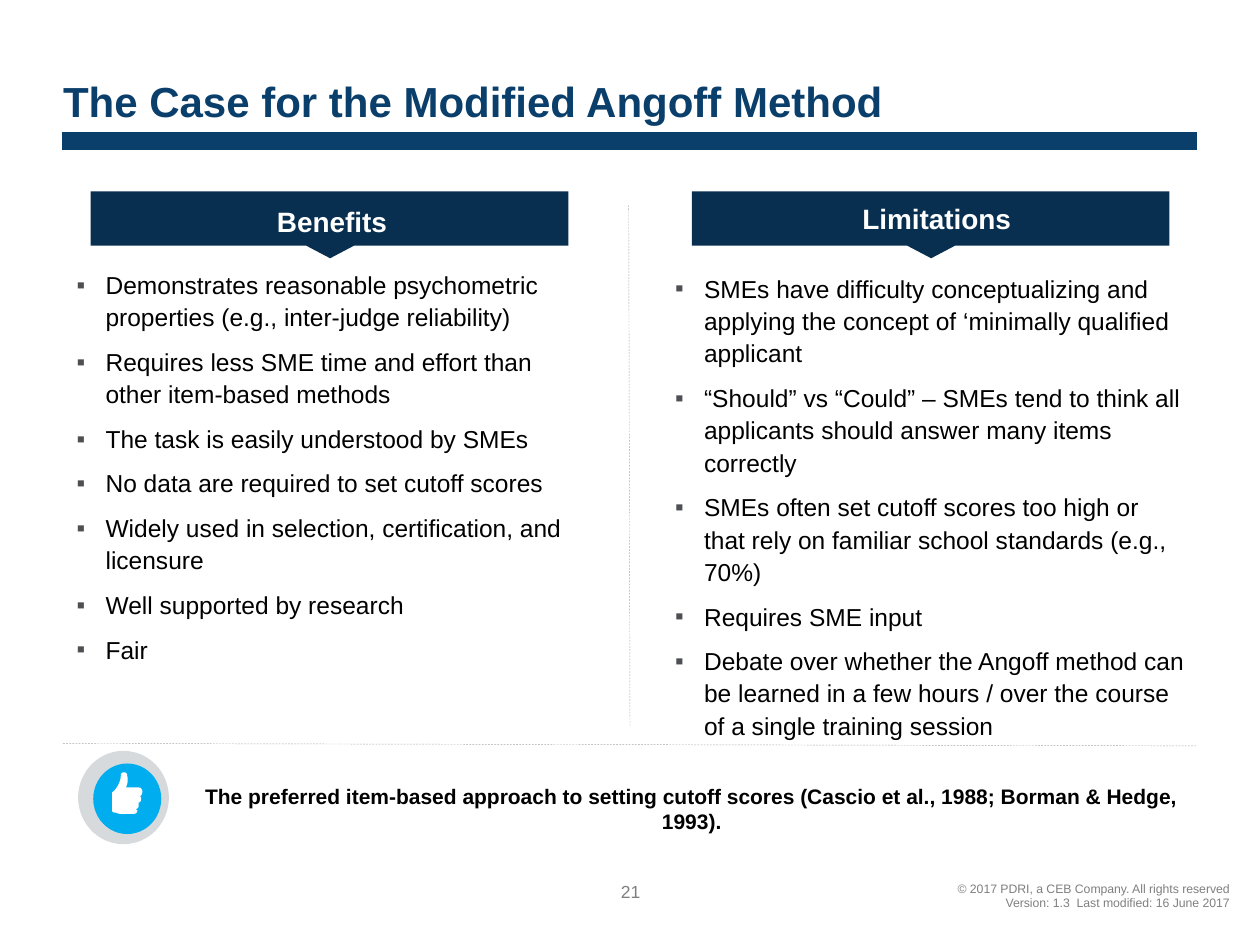
import lxml.etree
import pptx
import pptx.dml.color
import pptx.enum.dml
import pptx.enum.shapes
import pptx.enum.text
import pptx.oxml.ns
import pptx.util

Inches = pptx.util.Inches
Pt = pptx.util.Pt
ALIGN = pptx.enum.text.PP_ALIGN
ANCHOR = pptx.enum.text.MSO_ANCHOR
qn = pptx.oxml.ns.qn

THEME = {
    "font": "Arial",
    "title": "0A3F6B", "header": "082F50", "header_text": "FEFFFE",
    "body": "000000", "bullet": "4D4F53", "divider": "A6A6A6",
    "ring": "D6DADC", "disc": "00AEEF", "thumb": "FFFFFF",
    "footer": "7F7F7F", "version": "808080",
    "title_size": 24, "header_size": 16, "body_size": 14,
    "conclusion_size": 12, "number_size": 10, "footer_size": 7,
}

TITLE = "The Case for the Modified Angoff Method"
COLUMNS = [
    {"heading": "Benefits", "banner_left": 0.72, "heading_at": (0.2, 1.62), "list_at": (0.51, 2.07),
     "points": [
         "Demonstrates reasonable psychometric properties (e.g., inter-judge reliability)",
         "Requires less SME time and effort than other item-based methods",
         "The task is easily understood by SMEs",
         "No data are required to set cutoff scores",
         "Widely used in selection, certification, and licensure",
         "Well supported by research",
         "Fair",
     ]},
    {"heading": "Limitations", "banner_left": 5.49, "heading_at": (5, 1.6), "list_at": (5.26, 2.1),
     "points": [
         "SMEs have difficulty conceptualizing and applying the concept of ‘minimally qualified applicant",
         "“Should” vs “Could” – SMEs tend to think all applicants should answer many items correctly",
         "SMEs often set cutoff scores too high or that rely on familiar school standards (e.g., 70%)",
         "Requires SME input",
         "Debate over whether the Angoff method can be learned in a few hours / "
         "over the course of a single training session",
     ]},
]
CONCLUSION = ("The preferred item-based approach to setting cutoff scores "
              "(Cascio et al., 1988; Borman & Hedge, 1993).")
PAGE_NUMBER = "21"
COPYRIGHT = "© 2017 PDRI, a CEB Company. All rights reserved"
VERSION = "Version: 1.3\u00a0 Last modified: 16 June 2017"

BANNER_TOP = 1.52
BANNER = [(0, 0), (3.79, 0), (3.79, 0.43), (2.09, 0.43), (1.9, 0.53), (1.71, 0.43), (0, 0.43)]
RULES = [
    ((0.49, 1.12), (9.5, 1.12), "title", 10.25, False),
    ((4.99, 1.63), (5, 5.77), "divider", 0.25, True),
    ((0.5, 5.9), (9.5, 5.92), "divider", 0.25, True),
]
BADGE = [((0.62, 5.96, 0.72, 0.74), "ring"), ((0.74, 6.06, 0.54, 0.56), "disc")]
THUMB_START = (1.13, 6.28)
THUMB_CURVES = [
    ((1.13, 6.27), (1.12, 6.25), (1.1, 6.25)), ((1, 6.25), (1, 6.25), (1, 6.25)),
    ((1.01, 6.23), (1.02, 6.19), (1.01, 6.16)), ((1.01, 6.13), (0.99, 6.13), (0.98, 6.13)),
    ((0.97, 6.13), (0.96, 6.14), (0.96, 6.15)), ((0.96, 6.21), (0.92, 6.27), (0.89, 6.29)),
    ((0.89, 6.44), (0.89, 6.44), (0.89, 6.44)), ((0.9, 6.45), (0.91, 6.45), (0.92, 6.45)),
    ((0.94, 6.46), (0.95, 6.46), (0.97, 6.46)), ((1.06, 6.46), (1.06, 6.46), (1.06, 6.46)),
    ((1.08, 6.46), (1.09, 6.45), (1.09, 6.43)), ((1.09, 6.43), (1.08, 6.43), (1.08, 6.42)),
    ((1.09, 6.42), (1.1, 6.41), (1.1, 6.4)), ((1.1, 6.39), (1.1, 6.38), (1.1, 6.37)),
    ((1.11, 6.37), (1.12, 6.36), (1.12, 6.34)), ((1.12, 6.33), (1.12, 6.33), (1.11, 6.32)),
    ((1.12, 6.32), (1.13, 6.3), (1.13, 6.28)),
]
CURVE_STEPS = 6


def color(name):
    return pptx.dml.color.RGBColor.from_string(THEME[name])


def style(paragraph, size, ink, bold=False, align=ALIGN.LEFT):
    paragraph.alignment = align
    font = paragraph.font
    font.name, font.size, font.bold = THEME["font"], Pt(THEME[size]), bold
    font.color.rgb = color(ink)


def set_insets(frame, left=0, top=0, right=0, bottom=0):
    frame.margin_left, frame.margin_top = Inches(left), Inches(top)
    frame.margin_right, frame.margin_bottom = Inches(right), Inches(bottom)


def add_text(slide, box, lines, insets=(0, 0, 0, 0)):
    frame = slide.shapes.add_textbox(*map(Inches, box)).text_frame
    frame.word_wrap = True
    set_insets(frame, *insets)
    frame.text = "\n".join(lines)
    return frame


def fill_plain(shape, name):
    shape.shadow.inherit = False
    shape.fill.solid()
    shape.fill.fore_color.rgb = color(name)
    shape.line.fill.background()


def add_outline(slide, points, name):
    corners = [(Inches(x), Inches(y)) for x, y in points]
    builder = slide.shapes.build_freeform(*corners[0])
    builder.add_line_segments(corners[1:], close=True)
    fill_plain(builder.convert_to_shape(), name)


def add_rule(slide, start, end, ink, width, dashed):
    rule = slide.shapes.add_connector(
        pptx.enum.shapes.MSO_CONNECTOR.STRAIGHT, *map(Inches, start + end))
    rule.line.color.rgb = color(ink)
    rule.line.width = Pt(width)
    if dashed:
        rule.line.dash_style = pptx.enum.dml.MSO_LINE.DASH
    lxml.etree.SubElement(rule._element.spPr, qn("a:effectLst"))


def add_bullet(paragraph):
    props = paragraph._p.get_or_add_pPr()
    props.set("marL", str(Inches(0.23)))
    props.set("indent", str(-Inches(0.23)))
    tint = lxml.etree.SubElement(props, qn("a:buClr"))
    lxml.etree.SubElement(tint, qn("a:srgbClr"), val=THEME["bullet"])
    lxml.etree.SubElement(props, qn("a:buFont"), typeface=THEME["font"])
    lxml.etree.SubElement(props, qn("a:buChar"), char="▪")


def add_column(slide, column):
    points = add_text(slide, (*column["list_at"], 4.24, 5.07), column["points"], (0.1, 0.05, 0.1, 0.05))
    for index, paragraph in enumerate(points.paragraphs):
        add_bullet(paragraph)
        paragraph.line_spacing = 1.1
        paragraph.space_before = Pt(7 if index else 0)
        style(paragraph, "body_size", "body")
    add_outline(slide, [(column["banner_left"] + x, BANNER_TOP + y) for x, y in BANNER], "header")
    heading = add_text(slide, (*column["heading_at"], 4.87, 0.18), [column["heading"]])
    style(heading.paragraphs[0], "header_size", "header_text", True, ALIGN.CENTER)


def trace_curves(start, curves):
    points = [start]
    for first, second, end in curves:
        origin = points[-1]
        for step in range(1, CURVE_STEPS + 1):
            t = step / CURVE_STEPS
            weights = ((1 - t) ** 3, 3 * t * (1 - t) ** 2, 3 * t * t * (1 - t), t ** 3)
            points.append(tuple(
                sum(w * p[axis] for w, p in zip(weights, (origin, first, second, end)))
                for axis in (0, 1)))
    return points


def add_title(slide):
    title = slide.shapes.title
    title.left, title.top, title.width, title.height = map(Inches, (0.5, 0.4, 9, 0.65))
    frame = title.text_frame
    frame.text = TITLE
    frame.auto_size = pptx.enum.text.MSO_AUTO_SIZE.NONE
    frame.vertical_anchor = ANCHOR.BOTTOM
    set_insets(frame, 0, 0.05, 0.1, 0.05)
    style(frame.paragraphs[0], "title_size", "title", True)


def add_footer(slide):
    notice = add_text(slide, (4.26, 6.99, 5.5, 0.23), [COPYRIGHT, VERSION])
    notice.vertical_anchor = ANCHOR.BOTTOM
    for paragraph, ink in zip(notice.paragraphs, ("footer", "version")):
        paragraph.line_spacing = Pt(8)
        style(paragraph, "footer_size", ink, align=ALIGN.RIGHT)
    number = add_text(slide, (4.81, 7.03, 0.39, 0.15), [PAGE_NUMBER]).paragraphs[0]
    number.line_spacing = Pt(9)
    style(number, "number_size", "footer", align=ALIGN.CENTER)


def main():
    deck = pptx.Presentation()
    deck.slide_width, deck.slide_height = Inches(10), Inches(7.5)
    slide = deck.slides.add_slide(deck.slide_layouts[5])
    add_title(slide)
    add_footer(slide)
    for column in COLUMNS:
        add_column(slide, column)
    for rule in RULES:
        add_rule(slide, *rule)
    conclusion = add_text(slide, (1.42, 6.22, 8.14, 0.44), [CONCLUSION])
    style(conclusion.paragraphs[0], "conclusion_size", "body", True, ALIGN.CENTER)
    for box, name in BADGE:
        fill_plain(slide.shapes.add_shape(
            pptx.enum.shapes.MSO_SHAPE.OVAL, *map(Inches, box)), name)
    add_outline(slide, trace_curves(THUMB_START, THUMB_CURVES), "thumb")
    deck.save("out.pptx")


if __name__ == "__main__":
    main()
